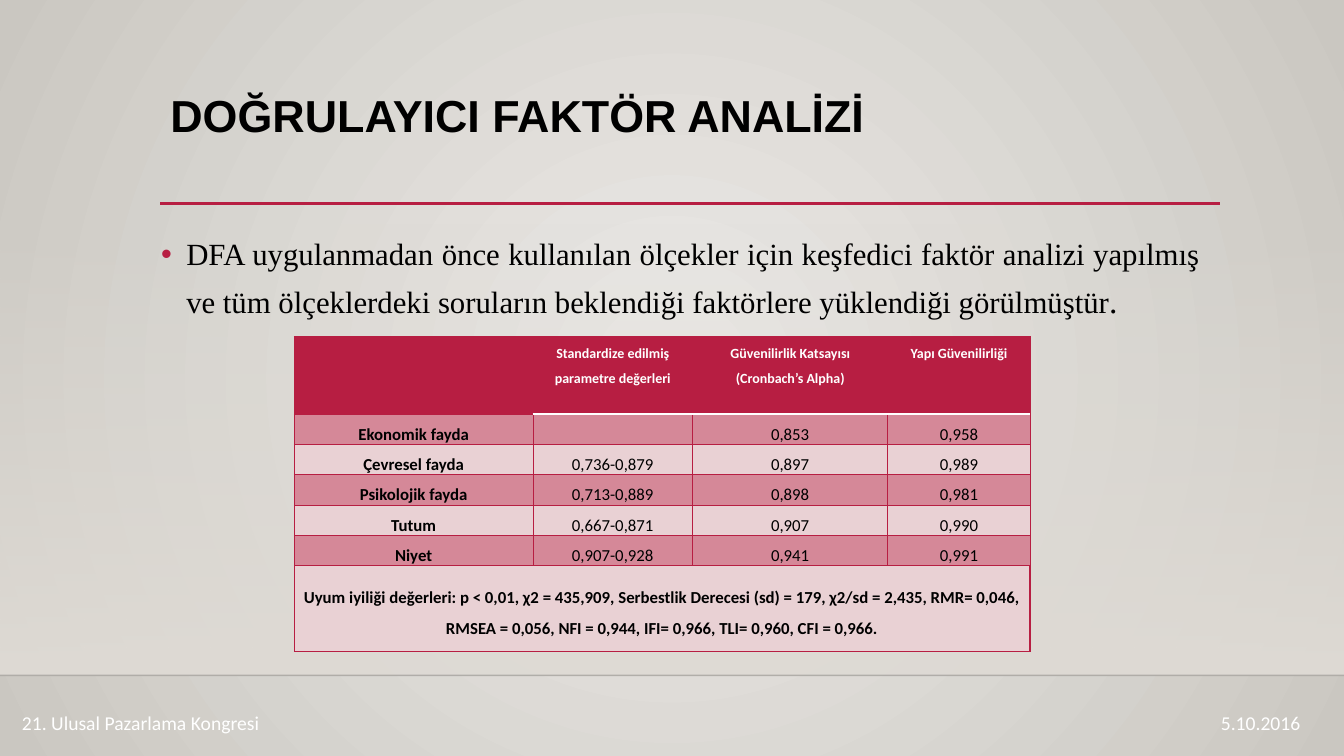
import pptx
import pptx.util
import pptx.dml.color
import pptx.enum.shapes
import pptx.enum.text
import pptx.oxml.ns
from lxml import etree

TITLE = "DOĞRULAYICI FAKTÖR ANALİZİ"
BODY = ("DFA uygulanmadan önce kullanılan ölçekler için keşfedici faktör analizi yapılmış "
        "ve tüm ölçeklerdeki soruların beklendiği faktörlere yüklendiği görülmüştür")
EVENT = "21. Ulusal Pazarlama Kongresi"
DATE = "5.10.2016"
FIT = ("Uyum iyiliği değerleri: p < 0,01, χ2 = 435,909, Serbestlik Derecesi (sd) = 179, "
       "χ2/sd = 2,435, RMR= 0,046, RMSEA = 0,056, NFI = 0,944, IFI= 0,966, TLI= 0,960, "
       "CFI = 0,966.")
ROWS = [
    ("", "Standardize edilmiş parametre değerleri",
     "Güvenilirlik Katsayısı (Cronbach’s Alpha)", "Yapı Güvenilirliği"),
    ("Ekonomik fayda", "", "0,853", "0,958"),
    ("Çevresel fayda", "0,736-0,879", "0,897", "0,989"),
    ("Psikolojik fayda", "0,713-0,889", "0,898", "0,981"),
    ("Tutum", "0,667-0,871", "0,907", "0,990"),
    ("Niyet", "0,907-0,928", "0,941", "0,991"),
    (FIT, "", "", ""),
]
WIDTHS = (170.6, 113.8, 139.7, 101.5)
HEIGHTS = (55.4,) + (18.7,) * 5 + (61.2,)


class Theme:
    red, white, black = "B71E42", "FFFFFF", "000000"
    band, pale = "D58898", "E9D1D4"
    glow, edge, floor = "ECEAE7", "CAC7C1", "DFDBD5"
    head, body, stop, foot, cell, label = 32, 22, 24, 14, 12, 10
    sans, serif, plain = "Arial", "Times New Roman", "Calibri"


Pt = pptx.util.Pt
RGB = pptx.dml.color.RGBColor.from_string
qn = pptx.oxml.ns.qn
ALIGN = pptx.enum.text.PP_ALIGN
ANCHOR = pptx.enum.text.MSO_ANCHOR


def node(parent, tag, **attrs):
    return etree.SubElement(parent, qn(tag), {k: str(v) for k, v in attrs.items()})


def fade(item, alpha):
    """Set the opacity, in percent, of a colour element."""
    node(item, "a:alpha", val=alpha * 1000)


def blend(fill, root, colors):
    """Give fill a two-colour gradient and return its element without a direction."""
    fill.gradient()
    for stop, color, place in zip(fill.gradient_stops, colors, (0, 1)):
        stop.color.rgb = RGB(color)
        stop.position = place
    grad = root.find(".//" + qn("a:gradFill"))
    grad.remove(grad.find(qn("a:lin")))
    return grad


def write(para, text, size, font=Theme.plain, color=Theme.black, bold=False,
          align=ALIGN.LEFT, space=1.0):
    para.alignment = align
    para.line_spacing = space
    if not text:
        node(para._p, "a:endParaRPr", sz=size * 100)
        return
    run = para.add_run()
    run.text = text
    run.font.size = Pt(size)
    run.font.name = font
    run.font.bold = bold
    run.font.color.rgb = RGB(color)


def box(slide, left, top, width, height, anchor=ANCHOR.TOP):
    frame = slide.shapes.add_textbox(Pt(left), Pt(top), Pt(width), Pt(height)).text_frame
    frame.word_wrap = True
    frame.vertical_anchor = anchor
    return frame.paragraphs[0]


def rule(slide, left, right, top, color, width):
    line = slide.shapes.add_connector(
        pptx.enum.shapes.MSO_CONNECTOR.STRAIGHT, Pt(left), Pt(top), Pt(right), Pt(top))
    line.line.color.rgb = RGB(color)
    line.line.width = Pt(width)
    node(line._element.spPr, "a:effectLst")
    return line


def border(cell, **sides):
    """Draw cell sides L, R, T, B, each given as (colour, width)."""
    props = cell._tc.get_or_add_tcPr()
    for spot, side in enumerate("LRTB"):
        color, width = sides[side]
        line = node(props, "a:ln" + side, w=int(Pt(width)))
        node(node(line, "a:solidFill"), "a:srgbClr", val=color)
        props.insert(spot, line)


def back(slide):
    grad = blend(slide.background.fill, slide._element, (Theme.glow, Theme.edge))
    path = node(grad, "a:path", path="circle")
    node(path, "a:fillToRect", l=50000, t=50000, r=50000, b=50000)

    floor = slide.shapes.add_shape(
        pptx.enum.shapes.MSO_SHAPE.RECTANGLE, 0, Pt(159.1), Pt(960), Pt(323.3))
    floor.shadow.inherit = False
    floor.line.fill.background()
    grad = blend(floor.fill, floor._element, (Theme.floor, Theme.floor))
    node(grad, "a:lin", ang=90 * 60000, scaled=0)
    fade(grad.find(".//" + qn("a:srgbClr")), 0)

    base = rule(slide, 0, 960, 482.4, Theme.black, 1)
    fade(base._element.find(".//" + qn("a:srgbClr")), 20)
    rule(slide, 114.5, 871.2, 145.2, Theme.red, 2.5)


def head(slide):
    title = slide.shapes.title
    title.left, title.top, title.width, title.height = map(Pt, (114.5, 63.4, 756, 82.8))
    frame = title.text_frame
    frame.auto_size = pptx.enum.text.MSO_AUTO_SIZE.NONE
    frame.vertical_anchor = ANCHOR.TOP
    write(frame.paragraphs[0], TITLE, Theme.head, font=Theme.sans, bold=True, space=0.9)


def body(slide):
    para = box(slide, 108, 159.1, 756, 137.5)
    props = para._p.get_or_add_pPr()
    props.set("marL", str(int(Pt(18))))
    props.set("indent", str(int(Pt(-18))))
    node(node(props, "a:buClr"), "a:srgbClr", val=Theme.red)
    node(props, "a:buFont", typeface=Theme.sans)
    node(props, "a:buChar", char="•")
    for text, size in ((BODY, Theme.body), (".", Theme.stop)):
        write(para, text, size, font=Theme.serif, align=ALIGN.JUSTIFY, space=1.2)


def grid(slide):
    last = len(ROWS) - 1
    table = slide.shapes.add_table(
        len(ROWS), len(WIDTHS), Pt(210.2), Pt(240.5),
        Pt(sum(WIDTHS)), Pt(sum(HEIGHTS))).table
    table.horz_banding = False
    for col, width in zip(table.columns, WIDTHS):
        col.width = Pt(width)
    for row, height in zip(table.rows, HEIGHTS):
        row.height = Pt(height)
    table.cell(last, 0).merge(table.cell(last, len(WIDTHS) - 1))

    thin, thick, light = (Theme.red, 0.75), (Theme.red, 1.25), (Theme.white, 1.25)
    for r, row in enumerate(ROWS):
        top = r == 0
        fill = Theme.red if top else Theme.band if r % 2 and r < last else Theme.pale
        for c, text in enumerate(row):
            cell = table.cell(r, c)
            cell.fill.solid()
            cell.fill.fore_color.rgb = RGB(fill)
            cell.margin_left = cell.margin_right = Pt(5)
            cell.margin_top = cell.margin_bottom = 0
            cell.vertical_anchor = ANCHOR.MIDDLE if r > 1 and c == 0 else ANCHOR.TOP
            write(cell.text_frame.paragraphs[0], text,
                  Theme.label if top else Theme.cell,
                  color=Theme.white if top else Theme.black,
                  bold=top or c == 0, align=ALIGN.CENTER, space=1.5)
            border(cell, L=thin, R=thick if r == last else thin,
                   T=light if r == 1 and c else thin,
                   B=light if top and c else thin)


def foot(slide):
    for text, left, width, align in ((DATE, 660.2, 275.8, ALIGN.RIGHT),
                                     (EVENT, 8.6, 467.3, ALIGN.LEFT)):
        para = box(slide, left, 504, width, 24.5, ANCHOR.MIDDLE)
        write(para, text, Theme.foot, color=Theme.white, align=align)


def main():
    deck = pptx.Presentation()
    deck.slide_width, deck.slide_height = Pt(960), Pt(540)
    slide = deck.slides.add_slide(deck.slide_layouts.get_by_name("Title Only"))
    for part in (back, head, body, grid, foot):
        part(slide)
    deck.save("out.pptx")


if __name__ == "__main__":
    main()
